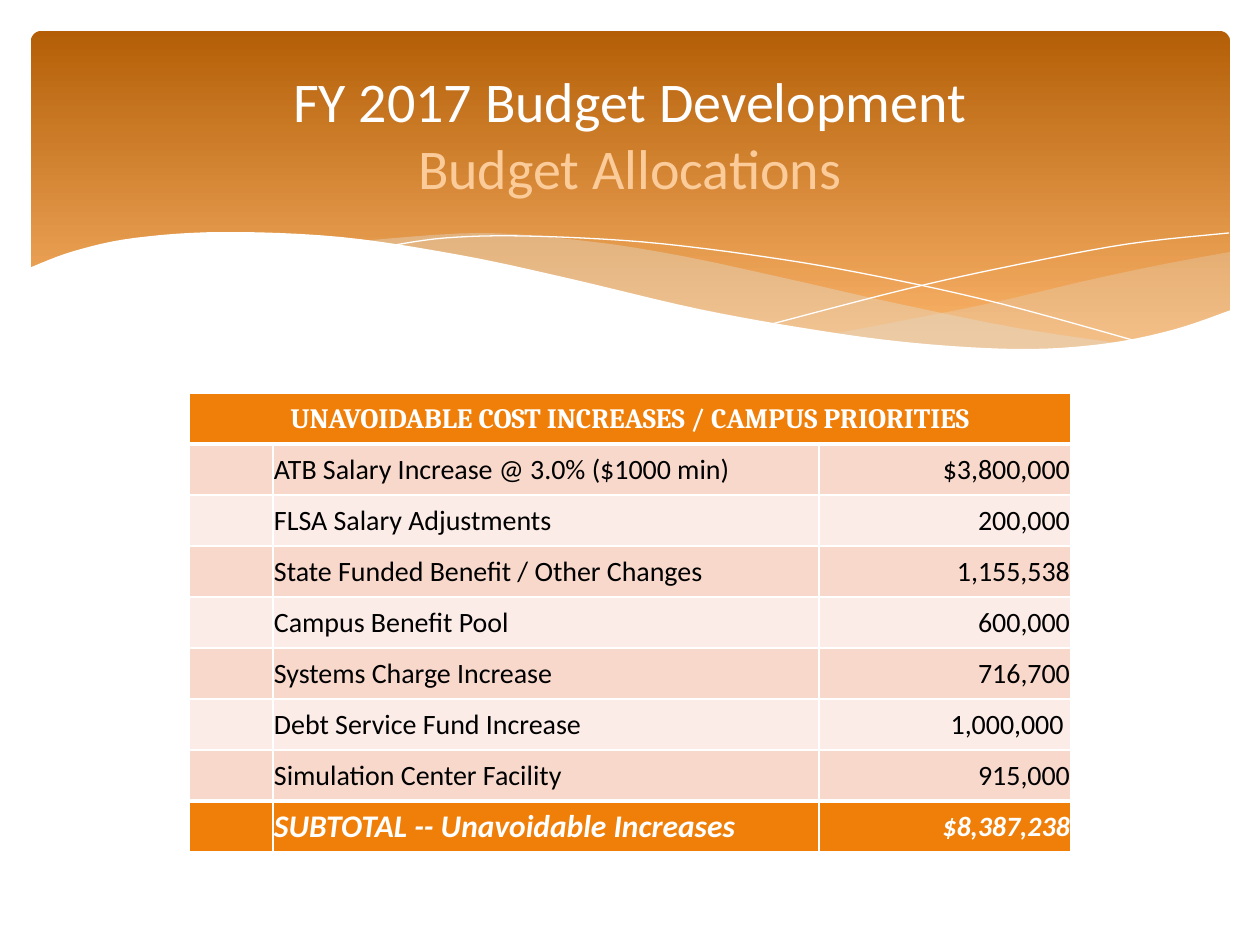
from lxml.etree import SubElement as Sub
from pptx import Presentation
from pptx.dml.color import RGBColor as RGB
from pptx.enum.shapes import MSO_SHAPE as Shape
from pptx.enum.text import MSO_ANCHOR as Anchor, MSO_AUTO_SIZE as Auto, PP_ALIGN as Align
from pptx.oxml.ns import qn
from pptx.util import Pt

SCALE = 914400 / 126
WHITE, BLACK = RGB(255, 255, 255), RGB(0, 0, 0)
BROWN, PEACH = RGB(0xB4, 0x5F, 0x07), RGB(0xF9, 0xB2, 0x68)
SAND, CREAM = RGB(0xE3, 0xDE, 0xD1), RGB(0xFB, 0xCC, 0x9A)
ORANGE = RGB(0xF0, 0x7F, 0x09)
BANDS = RGB(0xF9, 0xD8, 0xCC), RGB(0xFC, 0xEC, 0xE7)

# Knots of the banner's curves, in px
MASK = [(29, 268), (74, 251), (134, 238), (223, 232), (341, 237), (460, 255), (563, 277),
        (699, 309), (816, 330), (915, 343), (1019, 349), (1102, 344), (1172, 330), (1231, 310)]
RIGHT_TOP = [(1230, 252), (1160, 265), (1085, 281), (982, 305), (833, 334)]
RIGHT_LOW = [(833, 334), (922, 345), (1012, 350), (1099, 345), (1169, 331), (1230, 311)]
MID_TOP = [(1125, 344), (1017, 328), (890, 302), (793, 280), (682, 256), (586, 241),
           (479, 233), (360, 241)]
MID_LOW = [(360, 241), (456, 256), (566, 280), (713, 312), (838, 335), (942, 348),
           (1031, 350), (1125, 344)]
FALL = [(389, 246), (445, 238), (524, 236), (643, 242), (766, 257), (876, 276),
        (1002, 304), (1143, 343)]
RISE = [(772, 324), (907, 289), (1016, 265), (1128, 244), (1229, 233)]

COSTS = [
    ("ATB Salary Increase @ 3.0% ($1000 min)", "$3,800,000"),
    ("FLSA Salary Adjustments", "200,000"),
    ("State Funded Benefit / Other Changes", "1,155,538"),
    ("Campus Benefit Pool", "600,000"),
    ("Systems Charge Increase", "716,700"),
    ("Debt Service Fund Increase", "1,000,000 "),
    ("Simulation Center Facility", "915,000"),
]


def px(n):
    return round(n * SCALE)


def smooth(knots, steps=6):
    """Points of a Catmull-Rom curve through the knots."""
    ends = [knots[0], *knots, knots[-1]]
    pts = [knots[0]]
    for a, b, c, d in zip(ends, ends[1:], ends[2:], ends[3:]):
        for i in range(1, steps + 1):
            t = i / steps
            pts.append(tuple(
                (2 * q + (r - p) * t + (2 * p - 5 * q + 4 * r - s) * t ** 2
                 + (3 * q - p - 3 * r + s) * t ** 3) / 2
                for p, q, r, s in zip(a, b, c, d)))
    return pts


def put(par, text, size=16, font="Calibri", color=BLACK, bold=False, italic=False,
        align=Align.LEFT):
    par.alignment = align
    run = par.add_run()
    run.text = text
    face = run.font
    face.size, face.name, face.bold, face.italic = Pt(size), font, bold, italic
    face.color.rgb = color


class Deck:
    def __init__(self, wide, high):
        self.prs = Presentation()
        self.prs.slide_width, self.prs.slide_height = px(wide), px(high)
        self.slide = self.prs.slides.add_slide(self.prs.slide_layouts[5])
        self.shapes = self.slide.shapes

    def panel(self, x, y, w, h, top, low):
        box = self.shapes.add_shape(Shape.ROUNDED_RECTANGLE, px(x), px(y), px(w), px(h))
        box.adjustments[0] = 0.03
        box.shadow.inherit = False
        box.line.fill.background()
        box.fill.gradient()
        box.fill.gradient_angle = 270
        for stop, color, pos in zip(box.fill.gradient_stops, (top, low), (0, 0.9)):
            stop.color.rgb, stop.position = color, pos

    def outline(self, pts, close):
        first, *rest = [(px(x), px(y)) for x, y in pts]
        pen = self.shapes.build_freeform(*first)
        pen.add_line_segments(rest, close=close)
        form = pen.convert_to_shape()
        form.shadow.inherit = False
        return form

    def wave(self, pts, color, alpha=100):
        form = self.outline(pts, True)
        form.line.fill.background()
        form.fill.solid()
        form.fill.fore_color.rgb = color
        if alpha < 100:
            tint = form.fill._xPr.find(".//" + qn("a:srgbClr"))
            Sub(tint, qn("a:alpha"), val=str(alpha * 1000))

    def curve(self, pts, color):
        form = self.outline(pts, False)
        form.fill.background()
        form.line.color.rgb, form.line.width = color, Pt(0)

    def title(self, x, y, w, h, lines):
        box = self.shapes.title
        box.left, box.top, box.width, box.height = px(x), px(y), px(w), px(h)
        frame = box.text_frame
        frame.auto_size, frame.vertical_anchor = Auto.NONE, Anchor.MIDDLE
        par = frame.paragraphs[0]
        for i, (text, color) in enumerate(lines):
            if i:
                par.add_line_break()
            put(par, text, size=32, color=color, align=Align.CENTER)
        box.element.getparent().append(box.element)  # bring to front

    def table(self, x, y, cols, rows, high):
        grid = self.shapes.add_table(rows, len(cols), px(x), px(y),
                                     px(sum(cols)), px(high * rows)).table
        for col, wide in zip(grid.columns, cols):
            col.width = px(wide)
        for row in grid.rows:
            row.height = px(high)
        return grid

    def cell(self, cell, fill, text="", top=1, low=1, **fmt):
        cell.margin_left = cell.margin_right = cell.margin_top = px(1)
        cell.margin_bottom = 0
        cell.vertical_anchor = Anchor.MIDDLE
        props = cell._tc.get_or_add_tcPr()
        for side, wide in zip("LRTB", (1, 1, top, low)):
            line = Sub(props, qn("a:ln" + side), w=str(Pt(wide)))
            Sub(Sub(line, qn("a:solidFill")), qn("a:srgbClr"), val=str(WHITE))
        cell.fill.solid()
        cell.fill.fore_color.rgb = fill
        if text:
            put(cell.text_frame.paragraphs[0], text, **fmt)


def main():
    deck = Deck(1260, 945)

    # Banner
    deck.panel(31, 31, 1199, 340, BROWN, PEACH)
    deck.wave(smooth(RIGHT_TOP) + smooth(RIGHT_LOW), SAND, 29)
    deck.wave(smooth(MID_TOP) + smooth(MID_LOW), SAND, 40)
    deck.curve(smooth(FALL), WHITE)
    deck.curve(smooth(RISE), WHITE)
    deck.wave(smooth(MASK) + [(1231, 415), (29, 415)], WHITE)

    # Cost table
    last = len(COSTS) + 1
    grid = deck.table(189, 393, (84, 546, 252), last + 1, 51)
    grid.cell(0, 0).merge(grid.cell(0, 2))
    for c in range(3):
        deck.cell(grid.cell(0, c), ORANGE, low=3,
                  text="" if c else "UNAVOIDABLE COST INCREASES / CAMPUS PRIORITIES",
                  font="Cambria", color=WHITE, bold=True, align=Align.CENTER)
    for r, (name, cost) in enumerate(COSTS, 1):
        band = BANDS[(r - 1) % 2]
        edge = {"top": 3 if r == 1 else 1, "low": 3 if r == last - 1 else 1}
        deck.cell(grid.cell(r, 0), band, **edge)
        deck.cell(grid.cell(r, 1), band, name, **edge)
        deck.cell(grid.cell(r, 2), band, cost, align=Align.RIGHT, **edge)

    # Subtotal row
    total = {"top": 3, "color": WHITE, "bold": True, "italic": True}
    deck.cell(grid.cell(last, 0), ORANGE, top=3)
    deck.cell(grid.cell(last, 1), ORANGE, "SUBTOTAL -- Unavoidable Increases", size=18, **total)
    deck.cell(grid.cell(last, 2), ORANGE, "$8,387,238", align=Align.RIGHT, **total)

    # Title
    deck.title(63, 47, 1134, 173, [("FY 2017 Budget Development", WHITE),
                                   ("Budget Allocations", CREAM)])
    deck.prs.save("out.pptx")


if __name__ == "__main__":
    main()
